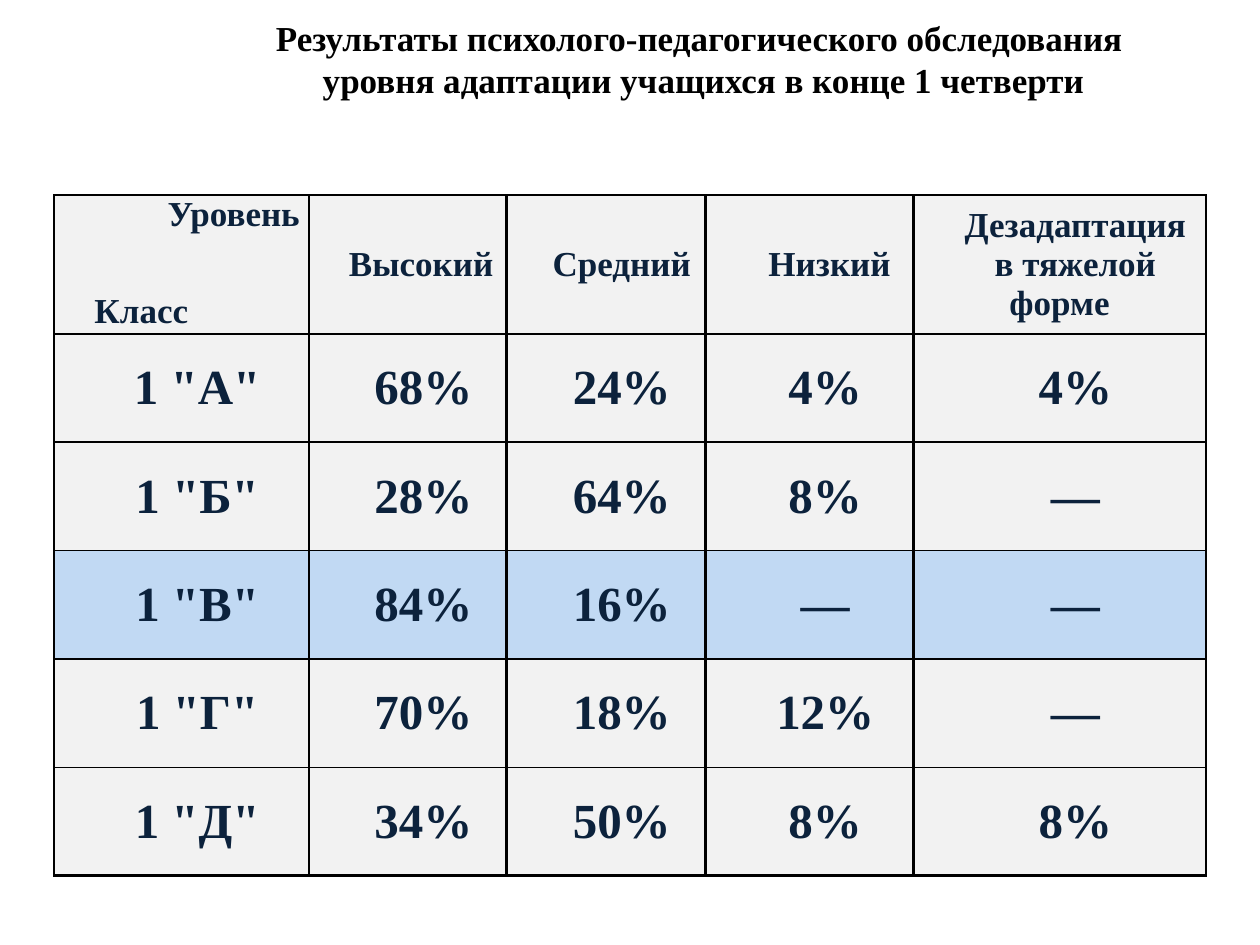
from lxml.etree import SubElement as Sub
from pptx import Presentation
from pptx.dml.color import RGBColor as Rgb
from pptx.enum.text import MSO_ANCHOR as Anchor, MSO_AUTO_SIZE as Auto, PP_ALIGN as Align
from pptx.oxml.ns import qn
from pptx.util import Inches, Pt

INK, GREY, BLUE, BLACK = "0C223C", "F2F2F2", "C1D9F3", "000000"
TITLE = [
    "Результаты психолого-педагогического обследования",
    " уровня адаптации учащихся в конце 1 четверти",
]
HEAD = ["Уровень\nКласс", "Высокий", "Средний", " Низкий", "Дезадаптация\nв тяжелой форме"]
ROWS = [
    ['1 "А"', "68%", "24%", "4%", "4%"],
    ['1 "Б"', "28%", "64%", "8%", "―"],
    ['1 "В"', "84%", "16%", "―", "―"],
    ['1 "Г"', "70%", "18%", "12%", "―"],
    ['1 "Д"', "34%", "50%", "8%", "8%"],
]
WIDTHS = [2.02, 1.57, 1.58, 1.65, 2.32]
HEIGHTS = [1.1] + [0.86] * len(ROWS)
MARKED = 3


def color(code):
    return Rgb.from_string(code)


def apply(item, **values):
    for name, value in values.items():
        setattr(item, name, value)


class Deck:
    """Holds the text style and the current slide."""

    def __init__(self, show):
        self.font = {"name": "Times New Roman", "bold": True}
        self.slide = show.slides.add_slide(show.slide_layouts[5])

    def text(self, frame, lines, size, ink):
        frame.text = "\n".join(lines)
        for para in frame.paragraphs:
            apply(para, alignment=Align.CENTER, line_spacing=1.0, space_before=Pt(0))
            props = para._p.get_or_add_pPr()
            props.set("marL", "0")
            props.set("indent", str(Inches(0.25)))
            for run in para.runs:
                apply(run.font, size=Pt(size), **self.font)
                run.font.color.rgb = color(ink)

    def title(self, lines, left, top, width, height):
        shape = self.slide.shapes.title
        apply(shape, left=Inches(left), top=Inches(top),
              width=Inches(width), height=Inches(height))
        frame = shape.text_frame
        apply(frame, word_wrap=True, auto_size=Auto.NONE, vertical_anchor=Anchor.TOP)
        self.text(frame, lines, 20, BLACK)

    def border(self, cell, sides):
        props = cell._tc.get_or_add_tcPr()
        for side, width in sides.items():
            line = Sub(props, qn(f"a:ln{side}"), w=str(Pt(width)))
            Sub(Sub(line, qn("a:solidFill")), qn("a:srgbClr"), val=BLACK)

    def cell(self, cell, text, size, fill, sides):
        apply(cell, margin_left=Inches(0.07), margin_right=Inches(0.07),
              margin_top=0, margin_bottom=0, vertical_anchor=Anchor.MIDDLE)
        self.border(cell, sides)
        cell.fill.solid()
        cell.fill.fore_color.rgb = color(fill)
        self.text(cell.text_frame, text.split("\n"), size, INK)

    def table(self, rows, left, top):
        table = self.slide.shapes.add_table(
            len(rows), len(WIDTHS), Inches(left), Inches(top),
            Inches(sum(WIDTHS)), Inches(sum(HEIGHTS))).table
        table.horz_banding = False
        for col, width in zip(table.columns, WIDTHS):
            col.width = Inches(width)
        for row, height in zip(table.rows, HEIGHTS):
            row.height = Inches(height)
        for r, row in enumerate(rows):
            sides = {"L": 1.5, "R": 1.5, "T": 1.5 if r < 2 else 1,
                     "B": 1.5 if r in (0, len(rows) - 1) else 1}
            for c, text in enumerate(row):
                self.cell(table.cell(r, c), text, 28 if r else 20,
                          BLUE if r == MARKED else GREY, sides)
        return table

    def corner(self, cell):
        cell.vertical_anchor = Anchor.TOP
        level, group = cell.text_frame.paragraphs
        level.alignment = Align.RIGHT
        apply(group, alignment=Align.LEFT, space_before=Pt(33))


def main():
    show = Presentation()
    apply(show, slide_width=Inches(10), slide_height=Inches(7.5))
    deck = Deck(show)
    deck.title(TITLE, 1.44, 0.08, 7.97, 1.4)
    table = deck.table([HEAD] + ROWS, 0.43, 1.55)
    deck.corner(table.cell(0, 0))
    table.cell(0, 1).text_frame.paragraphs[0].alignment = Align.LEFT
    show.save("out.pptx")


if __name__ == "__main__":
    main()
